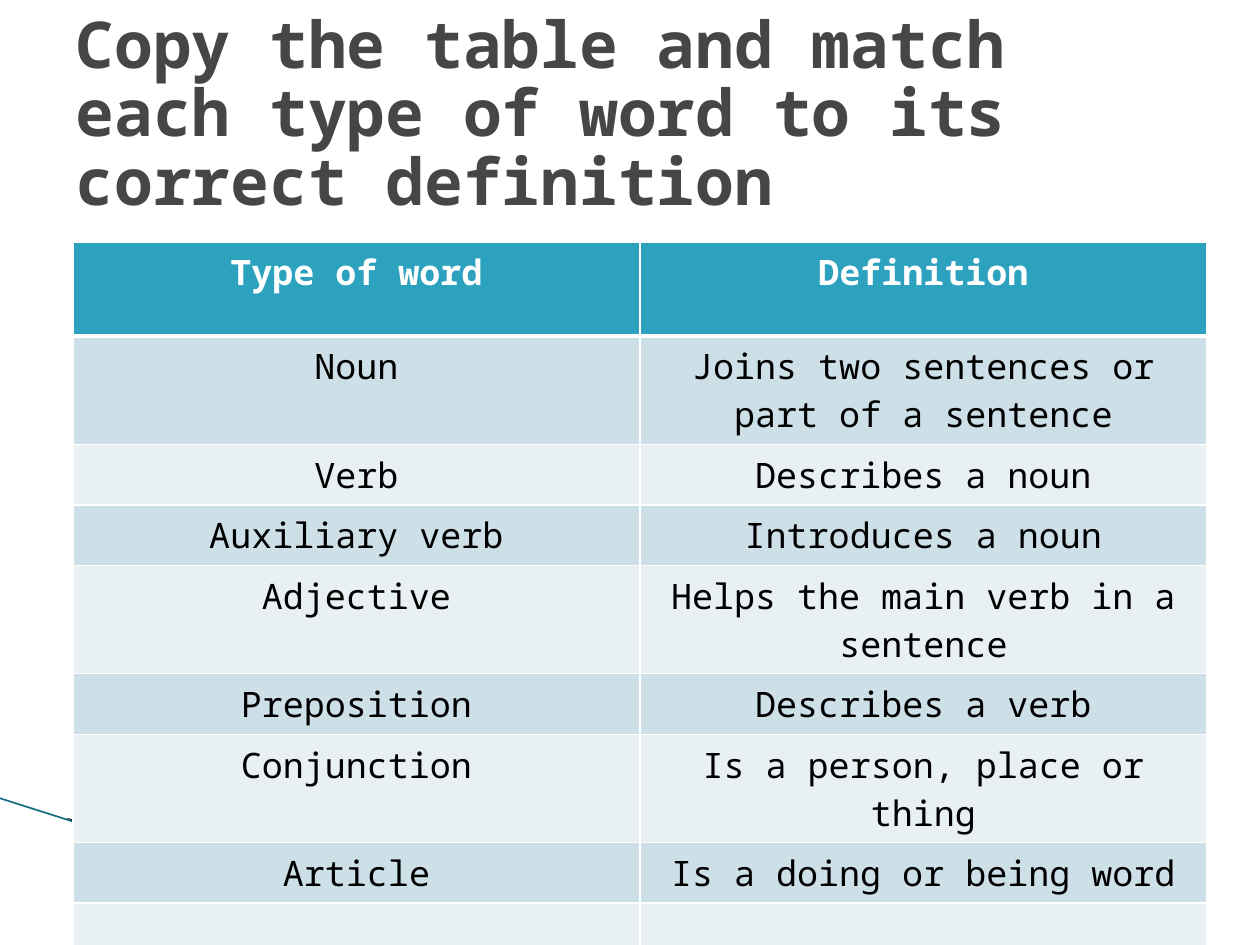
from lxml.etree import SubElement
from pptx import Presentation
from pptx.dml.color import RGBColor
from pptx.enum.shapes import MSO_CONNECTOR
from pptx.enum.text import MSO_ANCHOR, PP_ALIGN
from pptx.oxml import parse_xml
from pptx.oxml.ns import nsdecls, qn
from pptx.util import Emu, Pt

SCALE = 914400 / 126
FONT = "Noto Sans Mono"
WHITE = RGBColor(0xFF, 0xFF, 0xFF)
BLACK = RGBColor(0x00, 0x00, 0x00)
GREY = RGBColor(0x46, 0x46, 0x46)
TEAL = RGBColor(0x2D, 0xA2, 0xBF)
DARK_TEAL = RGBColor(0x14, 0x6B, 0x80)
PALE_TEAL = RGBColor(0xA0, 0xCB, 0xDC)
BAND_DARK = RGBColor(0xCD, 0xE0, 0xE8)
BAND_LIGHT = RGBColor(0xE8, 0xF0, 0xF4)

TITLE = "Copy the table and match each type of word to its correct definition"
ROWS = [
    ("Type of word", "Definition"),
    ("Noun", "Joins two sentences or part of a sentence"),
    ("Verb", "Describes a noun"),
    ("Auxiliary verb", "Introduces a noun"),
    ("Adjective", "Helps the main verb in a sentence"),
    ("Preposition", "Describes a verb"),
    ("Conjunction", "Is a person, place or thing"),
    ("Article", "Is a doing or being word"),
    ("", ""),
]


def px(length):
    """Turn pixels into EMU."""
    return Emu(round(length * SCALE))


def style_span(span, size, color, bold):
    """Format one run of text."""
    for name, value in {"name": FONT, "size": Pt(size), "bold": bold}.items():
        setattr(span.font, name, value)
    span.font.color.rgb = color


def add_wedge(page, points, color, opacity=100):
    """Draw a filled outline without a line."""
    builder = page.shapes.build_freeform(*points[0], scale=SCALE)
    builder.add_line_segments(points[1:], close=True)
    wedge = builder.convert_to_shape()
    wedge.shadow.inherit = False
    wedge.fill.solid()
    wedge.fill.fore_color.rgb = color
    wedge.line.fill.background()
    if opacity < 100:
        fill = wedge.fill._xPr.find(qn("a:solidFill"))
        SubElement(fill[0], qn("a:alpha"), val=str(opacity * 1000))


def add_rule(page, start, end, color, width):
    """Draw a straight line."""
    ends = [px(value) for value in start + end]
    rule = page.shapes.add_connector(MSO_CONNECTOR.STRAIGHT, *ends)
    rule.line.color.rgb = color
    rule.line.width = Pt(width)
    SubElement(rule._element.spPr, qn("a:effectLst"))


def set_borders(cell, widths):
    """Give a cell white borders, with widths in points by side."""
    properties = cell._tc.get_or_add_tcPr()
    for side, width in widths.items():
        properties.append(parse_xml(
            f'<a:ln{side} {nsdecls("a")} w="{Pt(width)}"><a:solidFill>'
            f'<a:srgbClr val="{WHITE}"/></a:solidFill></a:ln{side}>'))


def fill_cell(cell, text, row):
    """Write and format one table cell according to its row."""
    header = row == 0
    set_borders(cell, {"L": 1, "R": 1, "T": 3 if row == 1 else 1, "B": 3 if header else 1})
    cell.fill.solid()
    cell.fill.fore_color.rgb = TEAL if header else BAND_DARK if row % 2 else BAND_LIGHT
    para = cell.text_frame.paragraphs[0]
    para.alignment = PP_ALIGN.CENTER
    if text:
        span = para.add_run()
        span.text = text
        style_span(span, 20, WHITE if header else BLACK, header)


def add_word_table(page):
    """Add the table of word types and definitions."""
    frame = page.shapes.add_table(len(ROWS), 2, px(73), px(242), px(1134), px(612))
    table = frame.table
    for column in table.columns:
        column.width = px(567)
    for index, texts in enumerate(ROWS):
        table.rows[index].height = px(52 if index else 94)
        for column, text in enumerate(texts):
            fill_cell(table.cell(index, column), text, index)


def set_title(page):
    """Place and format the title."""
    box = page.shapes.title
    place = {"left": 63, "top": 38, "width": 1134, "height": 157}
    for name, value in place.items():
        setattr(box, name, px(value))
    box.text_frame.word_wrap = True
    box.text_frame.vertical_anchor = MSO_ANCHOR.MIDDLE
    para = box.text_frame.paragraphs[0]
    para.alignment = PP_ALIGN.LEFT
    para.line_spacing = 0.88
    span = para.add_run()
    span.text = TITLE
    style_span(span, 36.9, GREY, True)


def main():
    """Build the slide and save it."""
    deck = Presentation()
    deck.slide_width, deck.slide_height = px(1260), px(945)
    page = deck.slides.add_slide(deck.slide_layouts[5])
    add_wedge(page, [(69, 820), (750, 946), (575, 946), (69, 819)], PALE_TEAL, 40)
    add_wedge(page, [(67, 818), (576, 946), (469, 947), (68, 819)], BLACK)
    add_rule(page, (-1, 798), (467, 947), DARK_TEAL, 0.95)
    add_word_table(page)
    set_title(page)
    deck.save("out.pptx")


if __name__ == "__main__":
    main()
